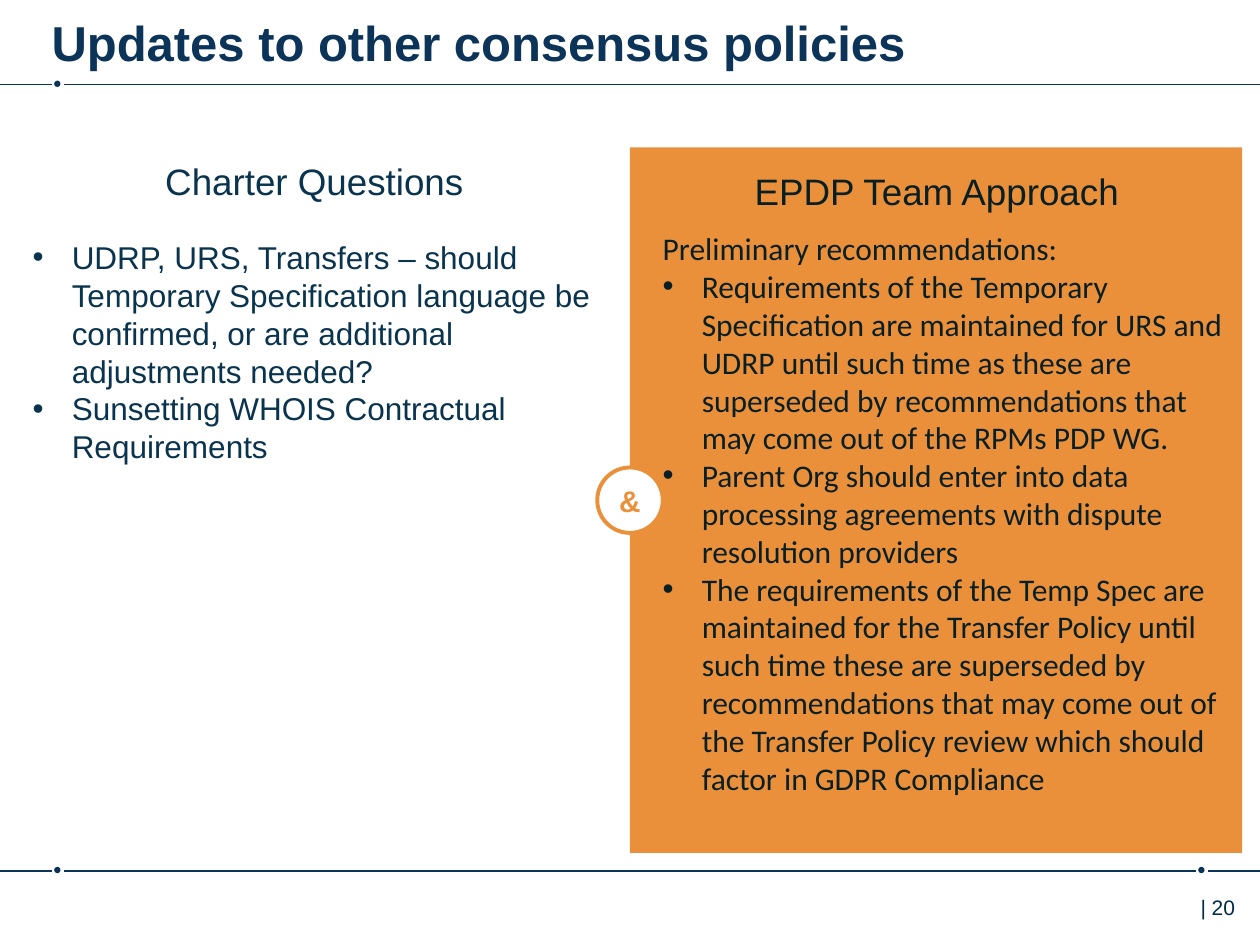
"""Build the slide that pairs charter questions with the team approach."""
from dataclasses import dataclass

import lxml.etree
import pptx
import pptx.dml.color
import pptx.enum.shapes
import pptx.enum.text
import pptx.oxml.ns
import pptx.util

Inches = pptx.util.Inches
Pt = pptx.util.Pt
Align = pptx.enum.text.PP_ALIGN
Anchor = pptx.enum.text.MSO_ANCHOR
ShapeType = pptx.enum.shapes.MSO_SHAPE

NAVY = "0C3458"
INK = "0A344E"
DARK = "0A1F24"
ORANGE = "EA903A"
WHITE = "FFFFFF"


@dataclass(frozen=True)
class Box:
    left: float
    top: float
    width: float
    height: float


@dataclass(frozen=True)
class Style:
    size: float
    color: str
    font: str = "Arial"
    bold: bool = False


@dataclass(frozen=True)
class Column:
    heading_index: int
    heading_box: Box
    body_box: Box
    color: str
    body_font: str
    intro: str
    bullets: tuple[str, ...]


@dataclass(frozen=True)
class Rule:
    y: float
    dots: tuple[float, ...]


COLUMNS = (
    Column(1, Box(0.99, 1.3, 3.01, 0.5), Box(0.26, 1.89, 4.61, 1.9), INK, "Arial", "", (
        "UDRP, URS, Transfers – should Temporary Specification language be "
        "confirmed, or are additional adjustments needed?",
        "Sunsetting WHOIS Contractual Requirements",
    )),
    Column(3, Box(5.93, 1.38, 3.01, 0.4), Box(5.26, 1.82, 4.6, 4.6), DARK, "Calibri",
           "Preliminary recommendations:", (
        "Requirements of the Temporary Specification are maintained for URS and UDRP "
        "until such time as these are superseded by recommendations that may come out "
        "of the RPMs PDP WG.",
        "Parent Org should enter into data processing agreements with dispute "
        "resolution providers",
        "The requirements of the Temp Spec are maintained for the Transfer Policy until "
        "such time these are superseded by recommendations that may come out of the "
        "Transfer Policy review which should factor in GDPR Compliance",
    )),
)
RULES = (Rule(0.67, (0.46,)), Rule(6.91, (0.46, 9.54)))


def rgb(color: str) -> pptx.dml.color.RGBColor:
    return pptx.dml.color.RGBColor.from_string(color)


def place(shape, box: Box) -> None:
    shape.left, shape.top = Inches(box.left), Inches(box.top)
    shape.width, shape.height = Inches(box.width), Inches(box.height)


def set_frame(frame, anchor=Anchor.TOP, side: float = 0, vertical: float = 0) -> None:
    frame.word_wrap = True
    frame.auto_size = pptx.enum.text.MSO_AUTO_SIZE.NONE
    frame.vertical_anchor = anchor
    frame.margin_left = frame.margin_right = Inches(side)
    frame.margin_top = frame.margin_bottom = Inches(vertical)


def add_run(paragraph, text: str, style: Style) -> None:
    run = paragraph.add_run()
    run.text = text
    run.font.name = style.font
    run.font.size = Pt(style.size)
    run.font.bold = style.bold
    run.font.color.rgb = rgb(style.color)


def set_bullet(paragraph, bulleted: bool) -> None:
    properties = paragraph._p.get_or_add_pPr()
    indent = Inches(0.31) if bulleted else 0
    properties.set("marL", str(indent))
    properties.set("indent", str(-indent))
    qualify = pptx.oxml.ns.qn
    if bulleted:
        lxml.etree.SubElement(properties, qualify("a:buFont"), typeface="Arial")
        lxml.etree.SubElement(properties, qualify("a:buChar"), char="•")
    else:
        lxml.etree.SubElement(properties, qualify("a:buNone"))


def add_filled(slide, kind, box: Box, color: str):
    shape = slide.shapes.add_shape(kind, 0, 0, 0, 0)
    place(shape, box)
    shape.shadow.inherit = False
    shape.fill.solid()
    shape.fill.fore_color.rgb = rgb(color)
    shape.line.fill.background()
    return shape


def add_line(slide, start: float, end: float, y: float) -> None:
    line = slide.shapes.add_connector(
        pptx.enum.shapes.MSO_CONNECTOR.STRAIGHT,
        Inches(start), Inches(y), Inches(end), Inches(y))
    line.line.color.rgb = rgb(NAVY)
    line.line.width = Pt(1)
    lxml.etree.SubElement(line.element.spPr, pptx.oxml.ns.qn("a:effectLst"))


def add_rule(slide, rule: Rule) -> None:
    start = 0.0
    for center in rule.dots:
        add_line(slide, start, center - 0.05, rule.y)
        add_filled(slide, ShapeType.OVAL,
                   Box(center - 0.03, rule.y - 0.03, 0.05, 0.05), NAVY)
        start = center + 0.05
    add_line(slide, start, 10, rule.y)


def fill_column(slide, column: Column) -> None:
    heading = slide.placeholders[column.heading_index]
    place(heading, column.heading_box)
    set_frame(heading.text_frame)
    paragraph = heading.text_frame.paragraphs[0]
    paragraph.alignment = Align.CENTER
    paragraph.line_spacing = 0.9
    paragraph.space_before = Pt(0)
    add_run(paragraph, heading_text(column), Style(21, column.color))

    body = slide.placeholders[column.heading_index + 1]
    place(body, column.body_box)
    set_frame(body.text_frame)
    entries = [(column.intro, False)] if column.intro else []
    entries += [(text, True) for text in column.bullets]
    for number, (text, bulleted) in enumerate(entries):
        frame = body.text_frame
        paragraph = frame.add_paragraph() if number else frame.paragraphs[0]
        set_bullet(paragraph, bulleted)
        paragraph.line_spacing = Pt(21.6)
        paragraph.space_before = Pt(0)
        add_run(paragraph, text, Style(18, column.color, column.body_font))


def heading_text(column: Column) -> str:
    return "EPDP Team Approach" if column.intro else "Charter Questions"


def main() -> None:
    presentation = pptx.Presentation()
    presentation.slide_width, presentation.slide_height = Inches(10), Inches(7.5)
    slide = presentation.slides.add_slide(
        presentation.slide_layouts.get_by_name("Comparison"))
    placeholders = list(slide.placeholders)

    for rule in RULES:
        add_rule(slide, rule)
    page_number = slide.shapes.add_textbox(0, 0, 0, 0)
    place(page_number, Box(9.43, 7.05, 0.57, 0.4))
    set_frame(page_number.text_frame, side=0.1, vertical=0.05)
    page_number.text_frame.word_wrap = False
    add_run(page_number.text_frame.paragraphs[0], "| 20", Style(12, "002B49"))

    add_filled(slide, ShapeType.RECTANGLE, Box(5, 1.17, 4.86, 5.6), ORANGE)
    badge = add_filled(slide, ShapeType.OVAL, Box(4.74, 3.71, 0.52, 0.52), WHITE)
    badge.line.color.rgb = rgb(ORANGE)
    badge.line.width = Pt(2.25)
    set_frame(badge.text_frame, Anchor.MIDDLE)
    badge.text_frame.paragraphs[0].alignment = Align.CENTER
    add_run(badge.text_frame.paragraphs[0], "&", Style(17, ORANGE, bold=True))

    title = slide.shapes.title
    place(title, Box(0.41, 0.05, 8.76, 0.49))
    set_frame(title.text_frame, vertical=0.05)
    title.text_frame.paragraphs[0].alignment = Align.LEFT
    add_run(title.text_frame.paragraphs[0], "Updates to other consensus policies",
            Style(28, NAVY, bold=True))
    for column in COLUMNS:
        fill_column(slide, column)
    for placeholder in placeholders:
        slide.shapes.element.append(placeholder.element)

    presentation.save("out.pptx")


if __name__ == "__main__":
    main()
